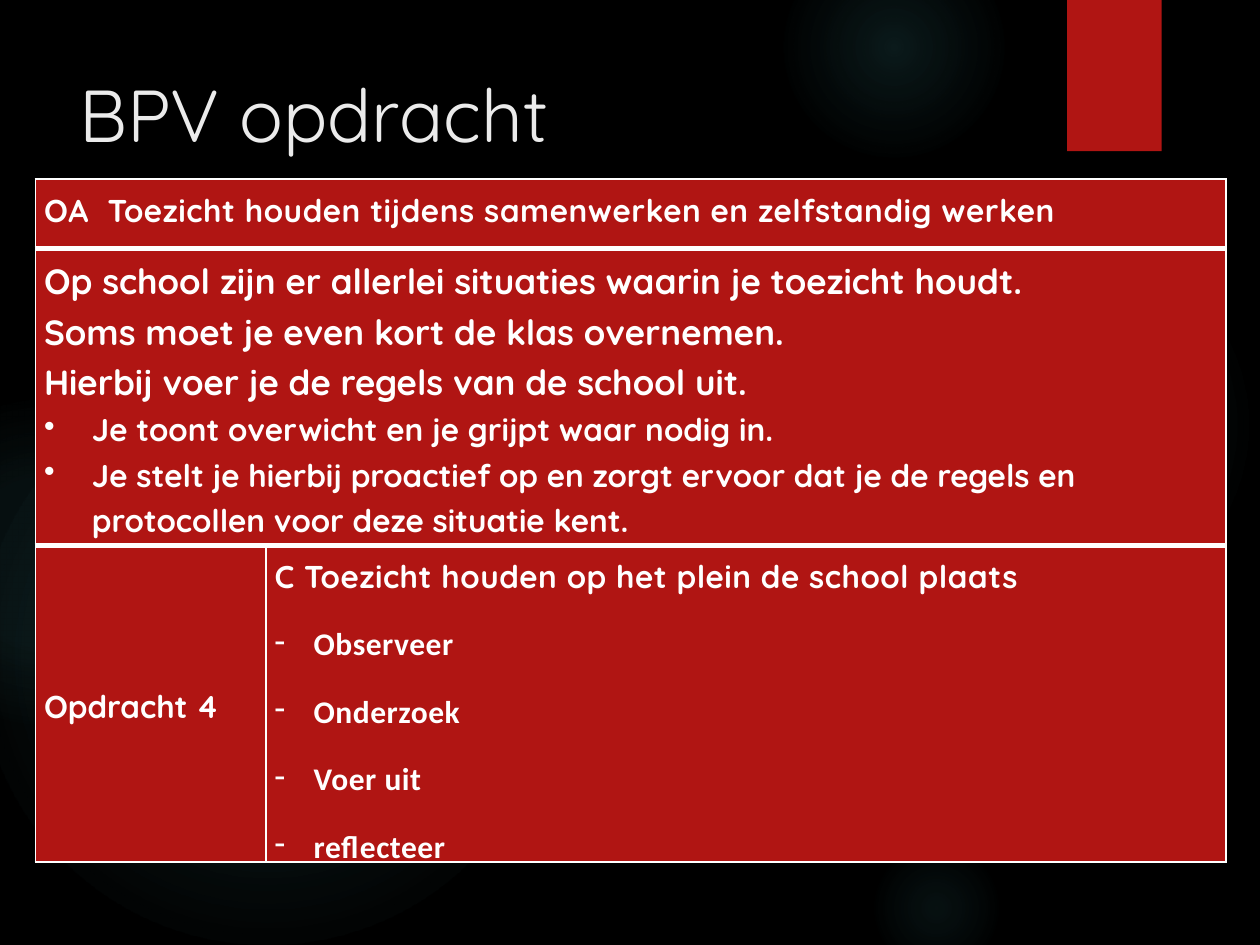
"""Build the slide 'BPV opdracht' with its assignment table."""
from dataclasses import dataclass

from pptx import Presentation
from pptx.dml.color import RGBColor as Rgb
from pptx.enum.shapes import MSO_SHAPE as Preset
from pptx.enum.text import MSO_ANCHOR as Anchor
from pptx.oxml import parse_xml
from pptx.oxml.ns import nsdecls
from pptx.util import Inches, Pt


@dataclass(frozen=True)
class Theme:
    back: str = "000000"
    red: str = "B01513"
    glow: str = "50B9C1"
    heading: str = "EBEBEB"
    white: str = "FFFFFF"
    font: str = "Quicksand"
    list_font: str = "Calibri"
    heading_size: int = 42
    lead_size: int = 20
    body_size: int = 18
    thin: int = 1
    thick: int = 3


THEME = Theme()
WIDTH, HEIGHT = Inches(10), Inches(7.5)


@dataclass(frozen=True)
class Glow:
    left: float
    top: float
    size: float
    stops: tuple[tuple[int, int], ...]


@dataclass(frozen=True)
class Line:
    text: str
    size: int = THEME.body_size
    font: str = THEME.font
    spacing: float = 1.15
    after: int = 0
    tracking: int = 0
    bullet: str = ""
    indent: float = 0


@dataclass(frozen=True)
class Block:
    row: int
    col: int
    lines: tuple[Line, ...]
    span: int = 1
    anchor: Anchor = Anchor.MIDDLE


GLOWS = (
    Glow(0.689, 0.244, 0.308, ((0, 7), (36, 6), (69, 0))),
    Glow(0.622, -0.067, 0.175, ((0, 14), (36, 7), (73, 0))),
    Glow(0.689, 0.889, 0.108, ((0, 9), (36, 5), (66, 0))),
    Glow(-0.017, 0.389, 0.458, ((0, 11), (36, 10), (75, 0))),
    Glow(-0.092, 0.423, 0.258, ((0, 8), (36, 8), (72, 0))),
)
COLUMNS = (1.83, 7.62)
ROWS = (0.55, 2.36, 2.51)
LEADS = (
    "Op school zijn er allerlei situaties waarin je toezicht houdt.",
    "Soms moet je even kort de klas overnemen.",
    "Hierbij voer je de regels van de school uit.",
)
POINTS = (
    "Je toont overwicht en je grijpt waar nodig in.",
    "Je stelt je hierbij proactief op en zorgt ervoor dat je de regels en "
    "protocollen voor deze situatie kent.",
)
STEPS = ("Observeer", "Onderzoek", "Voer uit", "reflecteer")
BLOCKS = (
    Block(0, 0, (Line("OA  Toezicht houden tijdens samenwerken en zelfstandig werken",
                      spacing=1.3, tracking=30),), span=2, anchor=Anchor.TOP),
    Block(1, 0, tuple(Line(lead, THEME.lead_size) for lead in LEADS)
          + tuple(Line(point, bullet="•", indent=0.38) for point in POINTS), span=2),
    Block(2, 0, (Line("Opdracht 4"),)),
    Block(2, 1, (Line("C Toezicht houden op het plein de school plaats",
                      spacing=1.3, after=10, tracking=30),)
          + tuple(Line(step, font=THEME.list_font, spacing=1.3, after=10, tracking=30,
                       bullet="-", indent=0.31) for step in STEPS)),
)


def draw_glow(slide, glow: Glow) -> None:
    """Draw a circle that fades outwards."""
    halo = slide.shapes.add_shape(Preset.OVAL, int(WIDTH * glow.left), int(HEIGHT * glow.top),
                                  int(WIDTH * glow.size), int(WIDTH * glow.size))
    halo.shadow.inherit = False
    halo.line.fill.background()
    halo.fill.background()
    stops = "".join(
        f'<a:gs pos="{place * 1000}"><a:srgbClr val="{THEME.glow}">'
        f'<a:alpha val="{alpha * 1000}"/></a:srgbClr></a:gs>' for place, alpha in glow.stops)
    fade = parse_xml(
        f'<a:gradFill {nsdecls("a")} rotWithShape="1"><a:gsLst>{stops}</a:gsLst>'
        '<a:path path="circle"><a:fillToRect l="50000" t="50000" r="50000" b="50000"/>'
        '</a:path></a:gradFill>')
    properties = halo._element.spPr
    properties.replace(properties.find("{*}noFill"), fade)


def draw_ribbon(slide) -> None:
    """Draw the red tab at the top edge."""
    ribbon = slide.shapes.add_shape(Preset.RECTANGLE, int(WIDTH * 0.847), 0,
                                    int(WIDTH * 0.075), int(HEIGHT * 0.16))
    ribbon.shadow.inherit = False
    ribbon.fill.solid()
    ribbon.fill.fore_color.rgb = Rgb.from_string(THEME.red)
    ribbon.line.fill.background()


def style_run(run, font: str, size: int, color: str, bold: bool) -> None:
    """Give a run its type."""
    run.font.name, run.font.size, run.font.bold = font, Pt(size), bold
    run.font.color.rgb = Rgb.from_string(color)


def draw_heading(slide, text: str) -> None:
    """Write the slide heading."""
    heading = slide.shapes.add_textbox(int(WIDTH * 0.053), int(HEIGHT / 15),
                                       int(WIDTH * 0.772), int(HEIGHT * 0.204))
    frame = heading.text_frame
    frame.word_wrap = True
    frame.text = text
    style_run(frame.paragraphs[0].runs[0], THEME.font, THEME.heading_size, THEME.heading, False)


def write_line(paragraph, line: Line) -> None:
    """Write one table line with its spacing and bullet."""
    paragraph.text = line.text
    paragraph.line_spacing = line.spacing
    paragraph.space_after = Pt(line.after)
    run = paragraph.runs[0]
    style_run(run, line.font, line.size, THEME.white, True)
    run.font._element.set("spc", str(line.tracking))
    if line.bullet:
        properties = paragraph._p.get_or_add_pPr()
        properties.set("marL", str(Inches(line.indent)))
        properties.set("indent", str(-Inches(line.indent)))
        properties.append(parse_xml(f'<a:buChar {nsdecls("a")} char="{line.bullet}"/>'))


def style_cell(cell, row: int) -> None:
    """Fill a cell and rule its four edges."""
    cell.fill.solid()
    cell.fill.fore_color.rgb = Rgb.from_string(THEME.red)
    cell.margin_left = cell.margin_right = Inches(0.07)
    cell.margin_top = cell.margin_bottom = 0
    top = THEME.thick if row > 0 else THEME.thin
    bottom = THEME.thick if row < len(ROWS) - 1 else THEME.thin
    edges = {"L": THEME.thin, "R": THEME.thin, "T": top, "B": bottom}
    for order, (side, weight) in enumerate(edges.items()):
        cell._tc.get_or_add_tcPr().insert(order, parse_xml(
            f'<a:ln{side} {nsdecls("a")} w="{Pt(weight)}"><a:solidFill>'
            f'<a:srgbClr val="{THEME.white}"/></a:solidFill></a:ln{side}>'))


def draw_assignment(slide) -> None:
    """Draw the assignment table."""
    table = slide.shapes.add_table(len(ROWS), len(COLUMNS), Inches(0.28), Inches(1.42),
                                   Inches(sum(COLUMNS)), Inches(sum(ROWS))).table
    table.first_row = table.horz_banding = False
    for column, width in zip(table.columns, COLUMNS):
        column.width = Inches(width)
    for index, height in enumerate(ROWS):
        table.rows[index].height = Inches(height)
        for cell in table.rows[index].cells:
            style_cell(cell, index)
    for block in BLOCKS:
        cell = table.cell(block.row, block.col)
        if block.span > 1:
            cell.merge(table.cell(block.row, block.col + block.span - 1))
        cell.vertical_anchor = block.anchor
        frame = cell.text_frame
        for index, line in enumerate(block.lines):
            write_line(frame.add_paragraph() if index else frame.paragraphs[0], line)


def main() -> None:
    """Build and save the slide."""
    deck = Presentation()
    deck.slide_width, deck.slide_height = WIDTH, HEIGHT
    slide = deck.slides.add_slide(deck.slide_layouts[6])
    slide.background.fill.solid()
    slide.background.fill.fore_color.rgb = Rgb.from_string(THEME.back)
    for glow in GLOWS:
        draw_glow(slide, glow)
    draw_ribbon(slide)
    draw_heading(slide, "BPV opdracht")
    draw_assignment(slide)
    deck.save("out.pptx")


if __name__ == "__main__":
    main()
